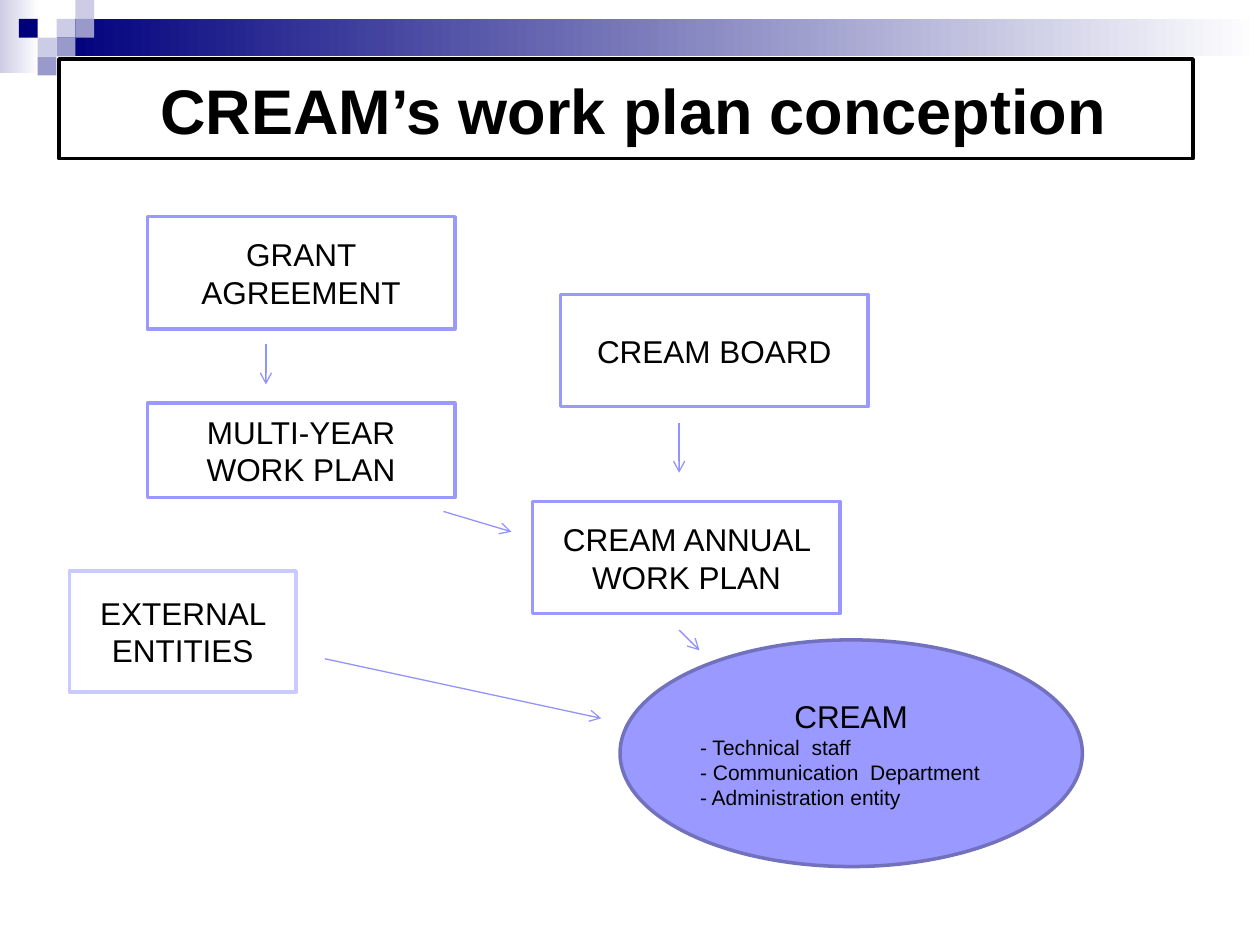
from dataclasses import dataclass

from lxml.etree import SubElement
from pptx import Presentation
from pptx.dml.color import RGBColor as Rgb
from pptx.enum.shapes import MSO_CONNECTOR as Connector, MSO_SHAPE as Shape
from pptx.enum.text import MSO_ANCHOR as Anchor, MSO_AUTO_SIZE as AutoSize, PP_ALIGN as Align
from pptx.oxml.ns import qn
from pptx.util import Cm, Pt


@dataclass(frozen=True)
class Theme:
    """Colours, font and sizes of the slide."""
    font: str = "Arial"
    black: str = "000000"
    white: str = "FFFFFF"
    navy: str = "00007D"
    mist: str = "CCCCE6"
    slate: str = "9999CC"
    violet: str = "9999FF"
    pale: str = "CACAFF"
    rim: str = "7171BD"
    arrow: str = "9393FC"
    title: int = 36
    body: int = 18
    small: int = 12
    outline: float = 2
    thin: float = 0.75


THEME = Theme()
TILE = 0.38


def set_values(target, values):
    """Set every attribute named in a dict."""
    for name, value in values.items():
        setattr(target, name, value)


def draw_line(line, colour, width):
    """Give a line its colour and width."""
    line.color.rgb = Rgb.from_string(colour)
    line.width = Pt(width)


def write(box, paragraphs):
    """Write (text, size, alignment, bold) paragraphs, centred vertically."""
    frame = box.text_frame
    set_values(frame, {"word_wrap": True, "auto_size": AutoSize.NONE,
                       "vertical_anchor": Anchor.MIDDLE})
    for index, (text, size, align, bold) in enumerate(paragraphs):
        para = frame.add_paragraph() if index else frame.paragraphs[0]
        para.alignment = align
        span = para.add_run()
        span.text = text
        set_values(span.font, {"name": THEME.font, "size": Pt(size), "bold": bold})
        span.font.color.rgb = Rgb.from_string(THEME.black)


def add_shape(page, kind, place, fill, line=None):
    """Add a preset shape; two fill colours make a horizontal gradient."""
    shape = page.shapes.add_shape(kind, *map(Cm, place))
    shape.shadow.inherit = False
    if isinstance(fill, tuple):
        shape.fill.gradient()
        shape.fill.gradient_angle = 0
        for stop, colour in zip(shape.fill.gradient_stops, fill):
            stop.color.rgb = Rgb.from_string(colour)
    else:
        shape.fill.solid()
        shape.fill.fore_color.rgb = Rgb.from_string(fill)
    if line:
        draw_line(shape.line, line, THEME.outline)
    else:
        shape.line.fill.background()
    return shape


def add_banner(page):
    """Add the gradient bars and the mosaic of tiles at the top."""
    add_shape(page, Shape.RECTANGLE, (0, 0, 0.79, 1.47), (THEME.mist, THEME.white))
    add_shape(page, Shape.RECTANGLE, (1.14, TILE, 24.26, 0.76), (THEME.navy, THEME.white))
    tiles = {
        THEME.mist: [(3, 1), (4, 0), (2, 2)],
        THEME.slate: [(4, 1), (3, 2), (2, 3)],
        THEME.navy: [(1, 1)],
    }
    for colour, cells in tiles.items():
        for column, row in cells:
            add_shape(page, Shape.RECTANGLE, (column * TILE, row * TILE, TILE, TILE), colour)


def add_title(page, text):
    """Place the title above the banner in a black frame."""
    title = page.shapes.title
    page.shapes._spTree.append(title._element)
    set_values(title, {"left": Cm(1.19), "top": Cm(1.19), "width": Cm(22.86), "height": Cm(2.01)})
    draw_line(title.line, THEME.black, THEME.outline)
    write(title, [(text, THEME.title, Align.CENTER, True)])
    title.text_frame.margin_left = Cm(0.55)


def add_step(page, place, lines, line=THEME.violet):
    """Add an outlined box with centred text."""
    box = add_shape(page, Shape.RECTANGLE, place, THEME.white, line)
    write(box, [(text, THEME.body, Align.CENTER, False) for text in lines])


def add_team(page, place, name, members):
    """Add the ellipse with its heading and list of members."""
    oval = add_shape(page, Shape.OVAL, place, THEME.violet, THEME.rim)
    write(oval, [(name, THEME.body, Align.CENTER, False)]
          + [(f"- {member}", THEME.small, Align.LEFT, False) for member in members])


def add_arrow(page, start, end):
    """Add a thin straight arrow."""
    arrow = page.shapes.add_connector(Connector.STRAIGHT, *map(Cm, start + end))
    draw_line(arrow.line, THEME.arrow, THEME.thin)
    SubElement(arrow.line._get_or_add_ln(), qn("a:tailEnd"), type="arrow")
    SubElement(arrow._element.spPr, qn("a:effectLst"))


def main():
    """Build and save the slide."""
    deck = Presentation()
    set_values(deck, {"slide_width": Cm(25.4), "slide_height": Cm(19.05)})
    page = deck.slides.add_slide(deck.slide_layouts.get_by_name("Title Only"))
    add_banner(page)
    add_title(page, "CREAM’s work plan conception")

    width, height = 6.2, 2.26
    add_step(page, (11.3, 5.94, width, height), ["CREAM BOARD"])
    add_step(page, (2.97, 4.37, width, height), ["GRANT AGREEMENT"])
    add_step(page, (2.97, 8.13, width, 1.9), ["MULTI-YEAR", "WORK PLAN"])
    add_step(page, (10.74, 10.11, width, height), ["CREAM ANNUAL WORK PLAN"])
    add_step(page, (1.4, 11.51, 4.57, 2.44), ["EXTERNAL ENTITIES"], THEME.pale)
    add_team(page, (12.5, 12.9, 9.32, 4.57), "CREAM",
             ["Technical  staff", "Communication  Department", "Administration entity"])

    for start, end in [
        ((5.36, 6.93), (5.36, 7.75)),
        ((13.69, 8.53), (13.69, 9.53)),
        ((8.94, 10.31), (10.31, 10.72)),
        ((6.55, 13.28), (12.12, 14.48)),
        ((13.69, 12.7), (14.1, 13.11)),
    ]:
        add_arrow(page, start, end)
    deck.save("out.pptx")


if __name__ == "__main__":
    main()
